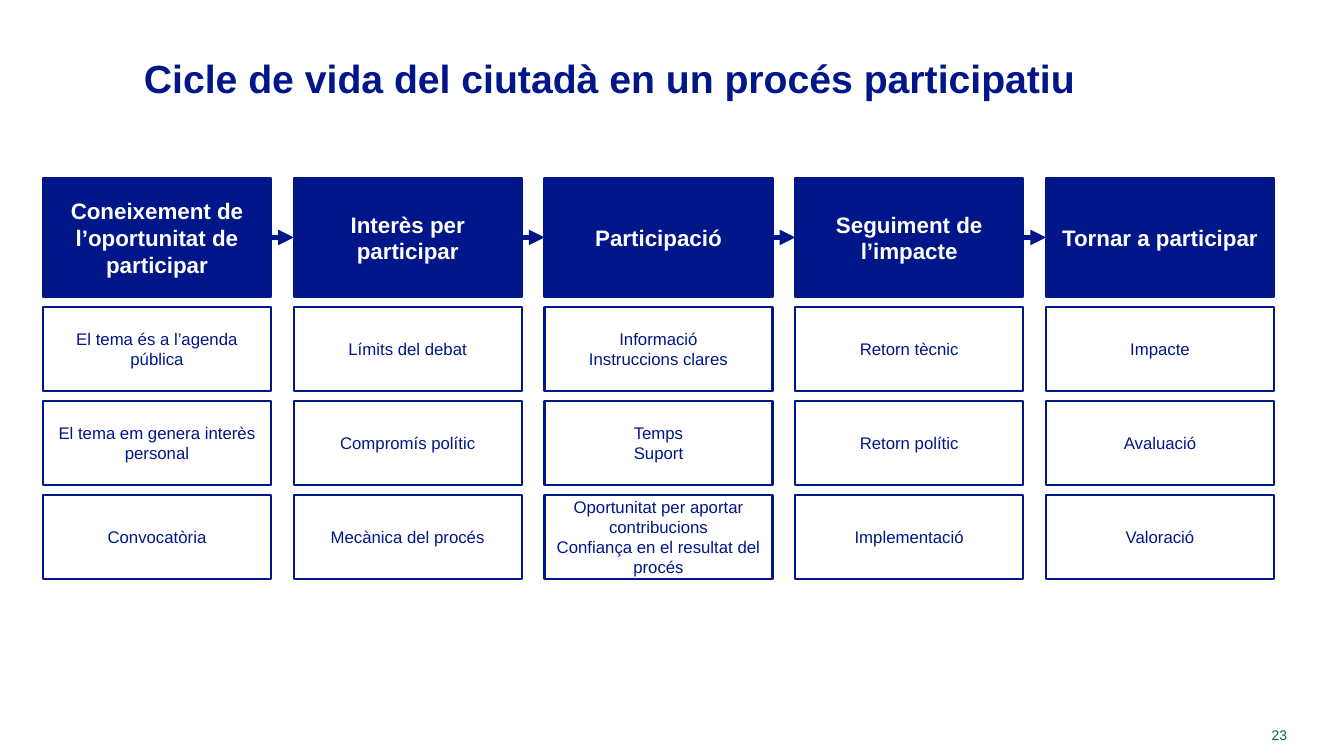
from itertools import pairwise
from lxml.etree import SubElement
from pptx import Presentation
from pptx.dml.color import RGBColor
from pptx.enum.shapes import MSO_CONNECTOR as Connector, MSO_SHAPE as Shape
from pptx.enum.text import MSO_ANCHOR as Anchor, PP_ALIGN as Align
from pptx.oxml.ns import qn
from pptx.util import Emu, Pt

TITLE = "Cicle de vida del ciutadà en un procés participatiu"
PAGE = "23"
STAGES = [
    ("Coneixement de l’oportunitat de participar",
     ["El tema és a l’agenda pública", "El tema em genera interès personal", "Convocatòria"]),
    ("Interès per participar",
     ["Límits del debat", "Compromís polític", "Mecànica del procés"]),
    ("Participació",
     ["Informació\nInstruccions clares", "Temps\nSuport",
      "Oportunitat per aportar contribucions\nConfiança en el resultat del procés"]),
    ("Seguiment de l’impacte",
     ["Retorn tècnic", "Retorn polític", "Implementació"]),
    ("Tornar a participar",
     ["Impacte", "Avaluació", "Valoració"]),
]
COLORS = {"navy": "001689", "white": "FFFFFF", "teal": "00676C"}
FONT = "Arial"
PX = 914400 / 100.8
LEFT, LAST_LEFT, BOX_W = 43, 1046, 228
STAGE_TOP, STAGE_H = 178, 119
FACTOR_TOP, FACTOR_H, FACTOR_PITCH = 307, 84, 94


def px(*lengths):
    return [Emu(round(length * PX)) for length in lengths]


def color(name):
    return RGBColor.from_string(COLORS[name])


def write(holder, text, size, ink, align, bold=False):
    frame = holder.text_frame
    frame.text = text
    frame.word_wrap = True
    frame.vertical_anchor = Anchor.MIDDLE
    for paragraph in frame.paragraphs:
        paragraph.alignment = align
        for run in paragraph.runs:
            run.font.name = FONT
            run.font.size = Pt(size)
            run.font.bold = bold
            run.font.color.rgb = color(ink)


def add_box(slide, area, fill, text, size, ink, bold=False, alpha=None):
    box = slide.shapes.add_shape(Shape.RECTANGLE, *px(*area))
    box.shadow.inherit = False
    box.fill.solid()
    box.fill.fore_color.rgb = color(fill)
    if alpha is not None:
        tint = box.fill._xPr.find(qn("a:solidFill"))[0]
        SubElement(tint, qn("a:alpha"), val=str(alpha * 1000))
    box.line.color.rgb = color("navy")
    box.line.width = Pt(1.5)
    write(box, text, size, ink, Align.CENTER, bold)
    return box


def add_arrow(slide, source, target):
    arrow = slide.shapes.add_connector(Connector.STRAIGHT, 0, 0, 0, 0)
    arrow.begin_connect(source, 3)
    arrow.end_connect(target, 1)
    arrow.line.color.rgb = color("navy")
    arrow.line.width = Pt(3.75)
    SubElement(arrow.line._get_or_add_ln(), qn("a:tailEnd"), type="triangle")
    SubElement(arrow._element.spPr, qn("a:effectLst"))


def main():
    deck = Presentation()
    deck.slide_width, deck.slide_height = px(1344, 756)
    slide = deck.slides.add_slide(deck.slide_layouts[6])

    title = slide.shapes.add_textbox(*px(134, 46, 1145, 63))
    write(title, TITLE, 28, "navy", Align.LEFT, True)
    page = slide.shapes.add_textbox(*px(1212, 720, 85, 29))
    write(page, PAGE, 10, "teal", Align.RIGHT)

    pitch = (LAST_LEFT - LEFT) / (len(STAGES) - 1)
    stages = []
    for column, (stage, factors) in enumerate(STAGES):
        left = LEFT + column * pitch
        stages.append(add_box(slide, (left, STAGE_TOP, BOX_W, STAGE_H),
                              "navy", stage, 16, "white", bold=True))
        for row, factor in enumerate(factors):
            top = FACTOR_TOP + row * FACTOR_PITCH
            add_box(slide, (left, top, BOX_W, FACTOR_H),
                    "white", factor, 12, "navy", alpha=56)
    for source, target in pairwise(stages):
        add_arrow(slide, source, target)

    deck.save("out.pptx")


if __name__ == "__main__":
    main()
